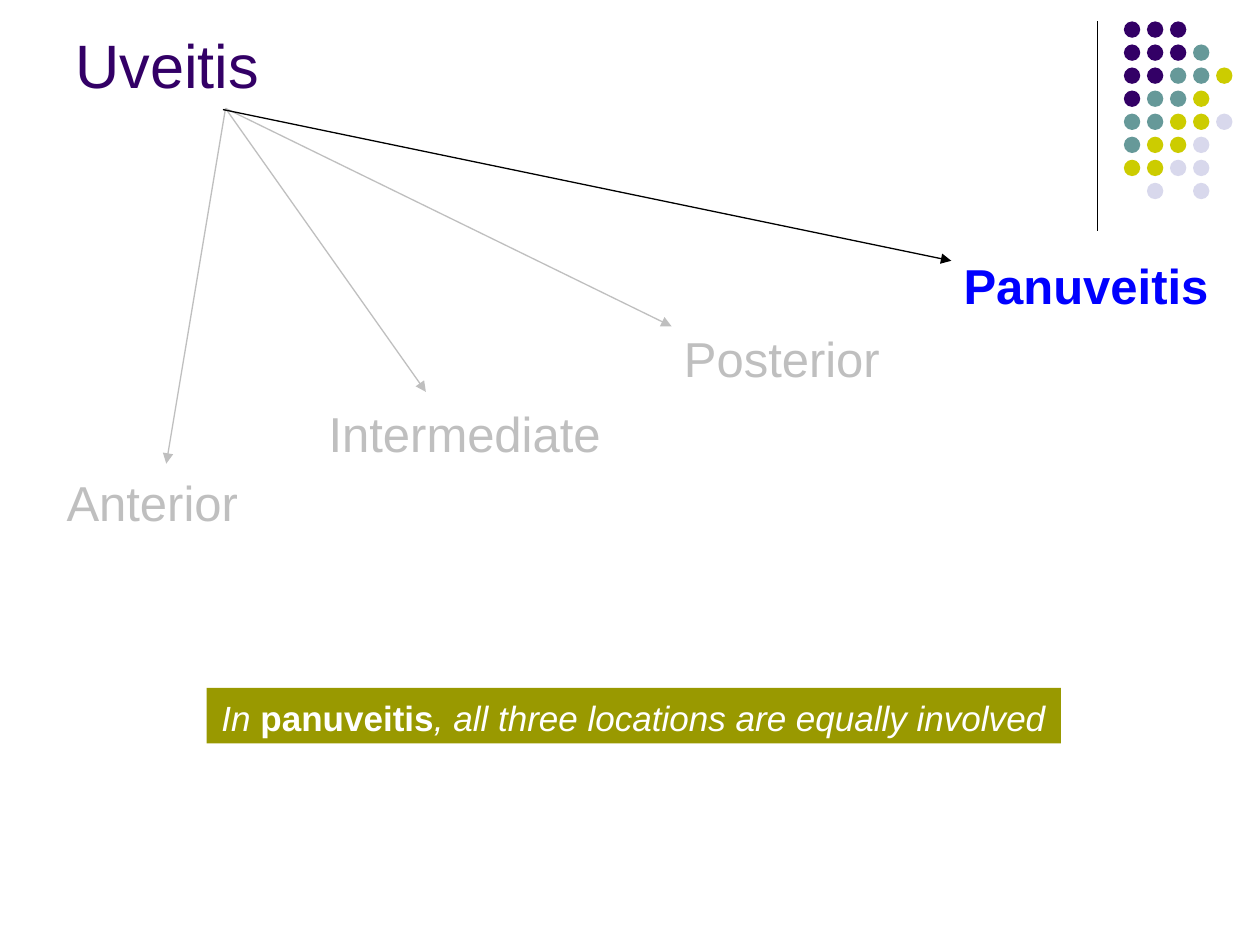
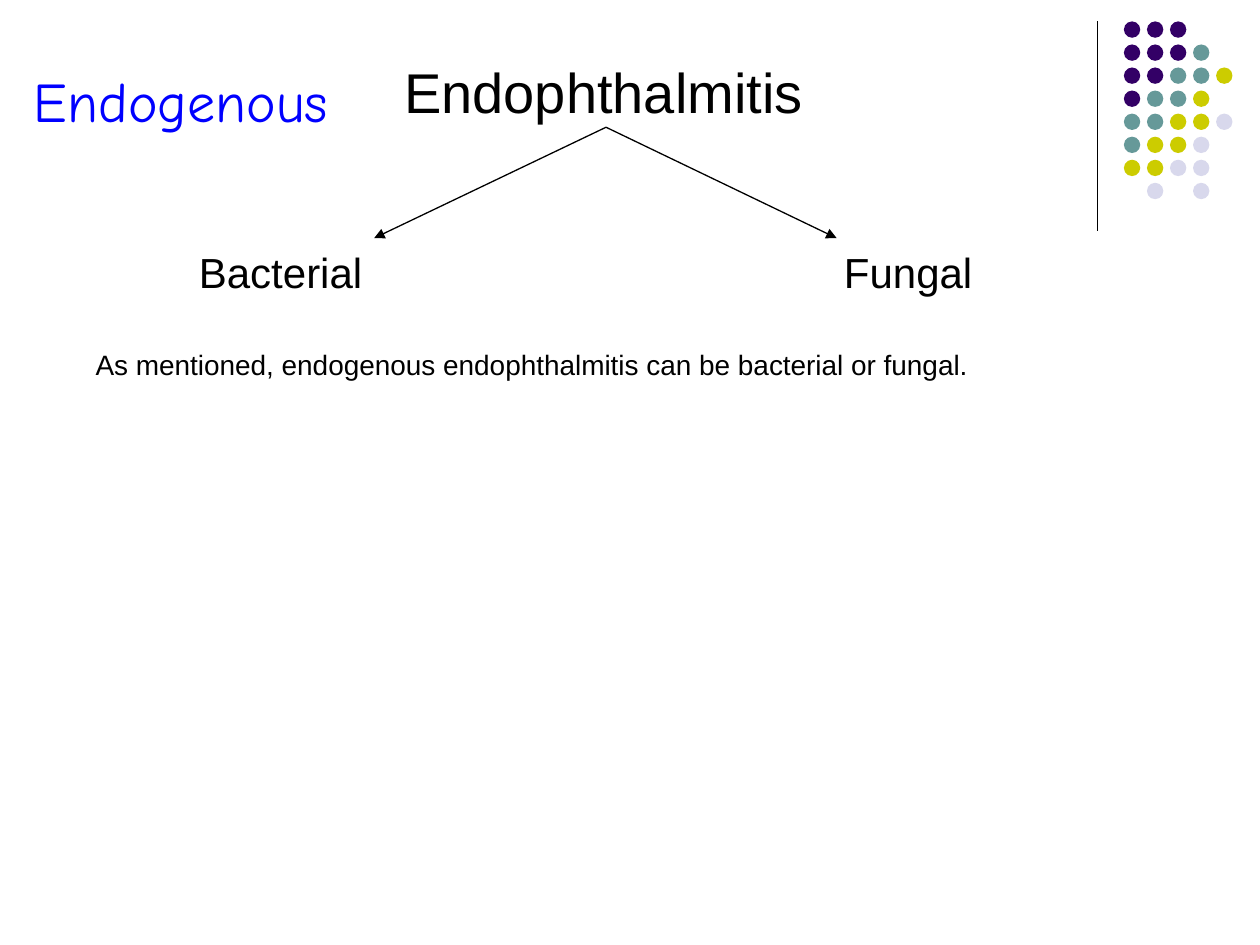
from lxml import etree
from pptx import Presentation
from pptx.dml.color import RGBColor
from pptx.enum.shapes import MSO_CONNECTOR as Connector, MSO_SHAPE as Shape
from pptx.enum.text import MSO_ANCHOR as Anchor, MSO_AUTO_SIZE as AutoSize, PP_ALIGN as Align
from pptx.oxml.ns import qn
from pptx.util import Inches, Pt

BLACK, WHITE, BLUE = "000000", "FFFFFF", "0000FF"
PURPLE, TEAL, LIME, LAVENDER = "330066", "669999", "CCCC00", "D8D8EC"
MUTED, OLIVE = "BFBFBF", "999900"

# Corner ornament: one letter per dot, a space leaves a gap
DOT_COLORS = {"P": PURPLE, "T": TEAL, "L": LIME, "V": LAVENDER}
DOT_ROWS = ["PPP", "PPPT", "PPTTL", "PTTL", "TTLLV", "TLLV", "LLVV", " V V"]
DOT_LEFT, DOT_TOP, DOT_PITCH, DOT_SIZE = 8.92, 0.17, 0.183, 0.13


def color(hex_string):
    return RGBColor.from_string(hex_string)


class Deck:
    """Holds the shared style and the slide being filled."""

    font = "Arial"
    line_width = 0.75

    def __init__(self):
        self.presentation = Presentation()
        self.presentation.slide_width = Inches(10)
        self.presentation.slide_height = Inches(7.5)
        self.slide = None

    def new_slide(self):
        self.slide = self.presentation.slides.add_slide(self.presentation.slide_layouts[6])
        self.line((8.71, 0.17), (8.71, 1.83))
        self.dots()

    def dots(self):
        group = self.slide.shapes.add_group_shape()
        for row, letters in enumerate(DOT_ROWS):
            for column, letter in enumerate(letters):
                if letter in DOT_COLORS:
                    left, top = DOT_LEFT + column * DOT_PITCH, DOT_TOP + row * DOT_PITCH
                    self.filled(group.shapes, Shape.OVAL, (left, top, DOT_SIZE, DOT_SIZE),
                                DOT_COLORS[letter])

    def filled(self, shapes, kind, box, fill):
        shape = shapes.add_shape(kind, *map(Inches, box))
        shape.shadow.inherit = False
        shape.fill.solid()
        shape.fill.fore_color.rgb = color(fill)
        shape.line.fill.background()
        return shape

    def line(self, start, end, line_color=BLACK, arrow=False):
        connector = self.slide.shapes.add_connector(
            Connector.STRAIGHT, *map(Inches, start + end))
        connector.line.color.rgb = color(line_color)
        connector.line.width = Pt(self.line_width)
        if arrow:
            outline = connector.line._get_or_add_ln()
            etree.SubElement(outline, qn("a:tailEnd"), type="triangle")
        etree.SubElement(connector._element.spPr, qn("a:effectLst"))

    def add_text(self, shape, runs, size, text_color, font=None, align=Align.LEFT, drop=0.04):
        """Fill a shape with runs of (text, bold, italic)."""
        frame = shape.text_frame
        frame.word_wrap = True
        frame.auto_size = AutoSize.NONE
        frame.vertical_anchor = Anchor.TOP
        frame.margin_top = Inches(0.05 + drop)
        frame.margin_bottom = 0
        paragraph = frame.paragraphs[0]
        paragraph.alignment = align
        for text, bold, italic in runs:
            run = paragraph.add_run()
            run.text = text
            run.font.name = font or self.font
            run.font.size = Pt(size)
            run.font.bold, run.font.italic = bold, italic
            run.font.color.rgb = color(text_color)

    def label(self, text, box, size, text_color=BLACK, bold=False, font=None):
        shape = self.slide.shapes.add_textbox(*map(Inches, box))
        self.add_text(shape, [(text, bold, False)], size, text_color, font)

    def banner(self, runs, box):
        shape = self.filled(self.slide.shapes, Shape.RECTANGLE, box, OLIVE)
        self.add_text(shape, runs, 20, WHITE, align=Align.CENTER, drop=0.02)


def uveitis_slide(deck):
    deck.new_slide()
    # Locations, with panuveitis standing out
    locations = [
        ("Anterior", (0.43, 3.66, 1.75, 0.57), (1.32, 3.68)),
        ("Intermediate", (2.51, 3.11, 2.39, 0.57), (3.38, 3.11)),
        ("Posterior", (5.33, 2.52, 1.78, 0.57), (5.33, 2.59)),
    ]
    for name, box, arrow_end in locations:
        deck.label(name, box, 28, MUTED)
        deck.line((1.79, 0.86), arrow_end, MUTED, arrow=True)
    deck.label("Panuveitis", (7.55, 1.94, 2.17, 0.57), 28, BLUE, bold=True)
    deck.line((1.77, 0.87), (7.55, 2.07), arrow=True)
    # Title and takeaway
    deck.label("Uveitis", (0.5, 0.13, 8.25, 0.62), 35, PURPLE)
    deck.banner([("In ", False, True), ("panuveitis", True, False),
                 (", all three locations are equally involved", False, True)],
                (1.64, 5.46, 6.78, 0.44))


def endophthalmitis_slide(deck):
    deck.new_slide()
    # Tree of causes
    deck.label("Endophthalmitis", (3.11, 0.37, 3.39, 0.64), 32)
    causes = [("Bacterial", (1.48, 1.87, 1.51, 0.5), 2.97),
              ("Fungal", (6.6, 1.87, 1.23, 0.5), 6.64)]
    for name, box, arrow_x in causes:
        deck.label(name, box, 24)
        deck.line((4.81, 1.01), (arrow_x, 1.89), arrow=True)
    # Qualifier and explanation
    deck.label("Endogenous", (0.17, 0.44, 3.04, 0.64), 32, BLUE, font="Comic Neue")
    deck.label("As mentioned, endogenous endophthalmitis can be bacterial or fungal.",
               (0.66, 2.67, 8.08, 0.37), 16)


def main():
    deck = Deck()
    uveitis_slide(deck)
    endophthalmitis_slide(deck)
    deck.presentation.save("out.pptx")


if __name__ == "__main__":
    main()
